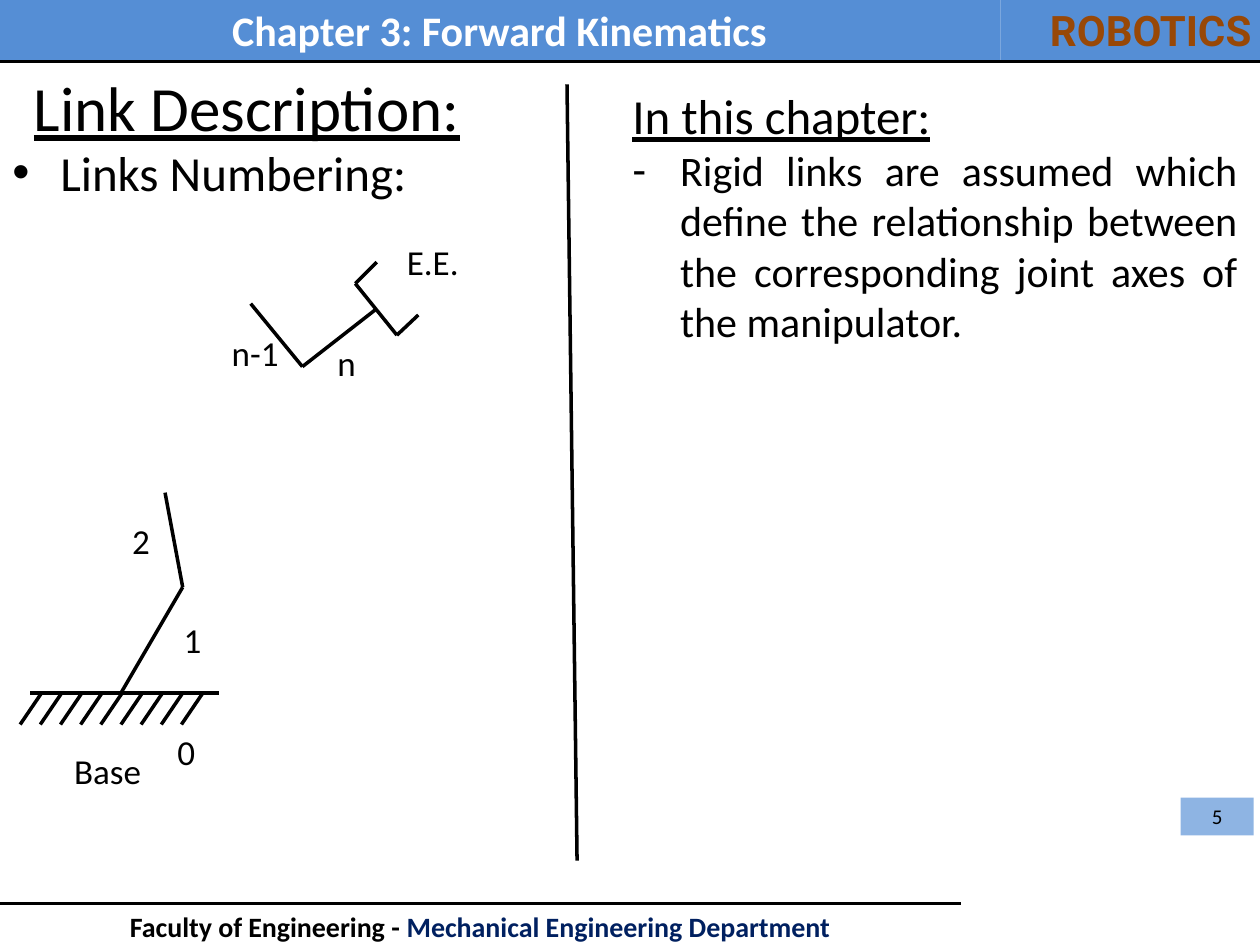
from itertools import pairwise
from lxml import etree
from pptx import Presentation
from pptx.dml.color import RGBColor
from pptx.enum.shapes import MSO_CONNECTOR as LINE, MSO_SHAPE as SHAPE
from pptx.enum.text import MSO_ANCHOR as ANCHOR, PP_ALIGN as ALIGN
from pptx.oxml.ns import qn
from pptx.util import Inches, Pt

BLACK, WHITE, NAVY, BROWN = "000000", "FFFFFF", "002060", "984807"
BLUE, PALE = "558ED5", "8EB4E3"

RULES = [[(0, 7.17), (7.63, 7.17)], [(0, 0.49), (10, 0.49)]]
DIVIDER = [(4.5, 0.67), (4.58, 6.83)]
GROUND = [(0.24, 5.5), (1.74, 5.5)]
HATCHES = 9
ARM = [(0.96, 5.5), (1.45, 4.66), (1.31, 3.91)]
WRIST = [(1.99, 2.41), (2.4, 2.91), (2.99, 2.45)]
GRIPPER = [(2.99, 2.08), (2.82, 2.25), (3.15, 2.66), (3.32, 2.5)]
LABELS = [
    ("n-1", 1.74, 2.58, 0.58), ("n", 2.58, 2.66, 0.35),
    ("E.E.", 3.13, 1.86, 0.62), ("Base", 0.49, 5.9, 0.74),
    ("0", 1.31, 5.75, 0.34), ("1", 1.36, 4.86, 0.34), ("2", 0.95, 4.07, 0.34),
]
NOTE = ("Rigid links are assumed which define the relationship between "
        "the corresponding joint axes of the manipulator.")

deck = Presentation()
deck.slide_width, deck.slide_height = Inches(10), Inches(7.5)
slide = deck.slides.add_slide(deck.slide_layouts[6])
shapes = slide.shapes


def color(code):
    return RGBColor.from_string(code)


def style(para, size, tint=BLACK, align=ALIGN.LEFT, bold=False, under=False,
          face="Calibri", bullet=None):
    """Set a paragraph's look; a bullet also gives it a hanging indent."""
    if bullet:
        props = para._p.get_or_add_pPr()
        props.set("marL", str(Inches(0.38)))
        props.set("indent", str(-Inches(0.38)))
        etree.SubElement(props, qn("a:buFont")).set("typeface", "Arial")
        etree.SubElement(props, qn("a:buChar")).set("char", bullet)
    para.alignment = align
    font = para.font
    font.size, font.name, font.bold, font.underline = Pt(size), face, bold, under
    font.color.rgb = color(tint)


def write(box, text, size, anchor=ANCHOR.TOP, wrap=True, **look):
    frame = box.text_frame
    frame.word_wrap, frame.vertical_anchor = wrap, anchor
    para = frame.paragraphs[0]
    para.text = text
    style(para, size, **look)
    return frame


def text_box(*area):
    return shapes.add_textbox(*map(Inches, area))


def panel(area, fill):
    box = shapes.add_shape(SHAPE.RECTANGLE, *map(Inches, area))
    box.shadow.inherit = False
    box.fill.solid()
    box.fill.fore_color.rgb = color(fill)
    box.line.fill.background()
    return box


def draw(points):
    """Join the points with straight lines."""
    for start, end in pairwise(points):
        line = shapes.add_connector(LINE.STRAIGHT, *map(Inches, start + end))
        line.line.width = Pt(2)
        line.line.color.rgb = color(BLACK)
        etree.SubElement(line._element.spPr, qn("a:effectLst"))


# Header and footer
write(panel((-0.01, -0.01, 7.95, 0.5), BLUE), "Chapter 3: Forward Kinematics",
      24, tint=WHITE, align=ALIGN.CENTER, bold=True)
write(panel((7.94, -0.01, 2.09, 0.5), BLUE), "ROBOTICS",
      24, tint=BROWN, align=ALIGN.RIGHT, bold=True, face="Roboto")
footer = write(text_box(-0.01, 7.17, 7.64, 0.37), "Faculty of Engineering - ",
               16, align=ALIGN.CENTER, bold=True)
dept = footer.paragraphs[0].add_run()
dept.text = "Mechanical Engineering Department"
dept.font.color.rgb = color(NAVY)
for rule in RULES:
    draw(rule)

# Headings and page number
write(text_box(0.17, 0.49, 9.83, 0.71), "Link Description:", 36,
      anchor=ANCHOR.MIDDLE, under=True)
write(text_box(0, 1.08, 9.92, 6.08), "Links Numbering:", 28,
      align=ALIGN.JUSTIFY, bullet="•")
write(panel((9.37, 6.33, 0.58, 0.3), PALE), "5", 12,
      anchor=ANCHOR.MIDDLE, align=ALIGN.CENTER)

# Manipulator diagram
for path in (GROUND, ARM, WRIST, GRIPPER):
    draw(path)
for i in range(HATCHES):
    x = 0.33 + i * 0.16
    draw([(x, 5.5), (x - 0.17, 5.75)])
for text, x, y, width in LABELS:
    write(text_box(x, y, width, 0.44), text, 20, wrap=False)

# Right column
notes = write(text_box(4.92, 0.63, 5, 2.52), "In this chapter:", 28, under=True)
item = notes.add_paragraph()
item.text = NOTE
style(item, 24, align=ALIGN.JUSTIFY, bullet="-")
draw(DIVIDER)

deck.save("out.pptx")
